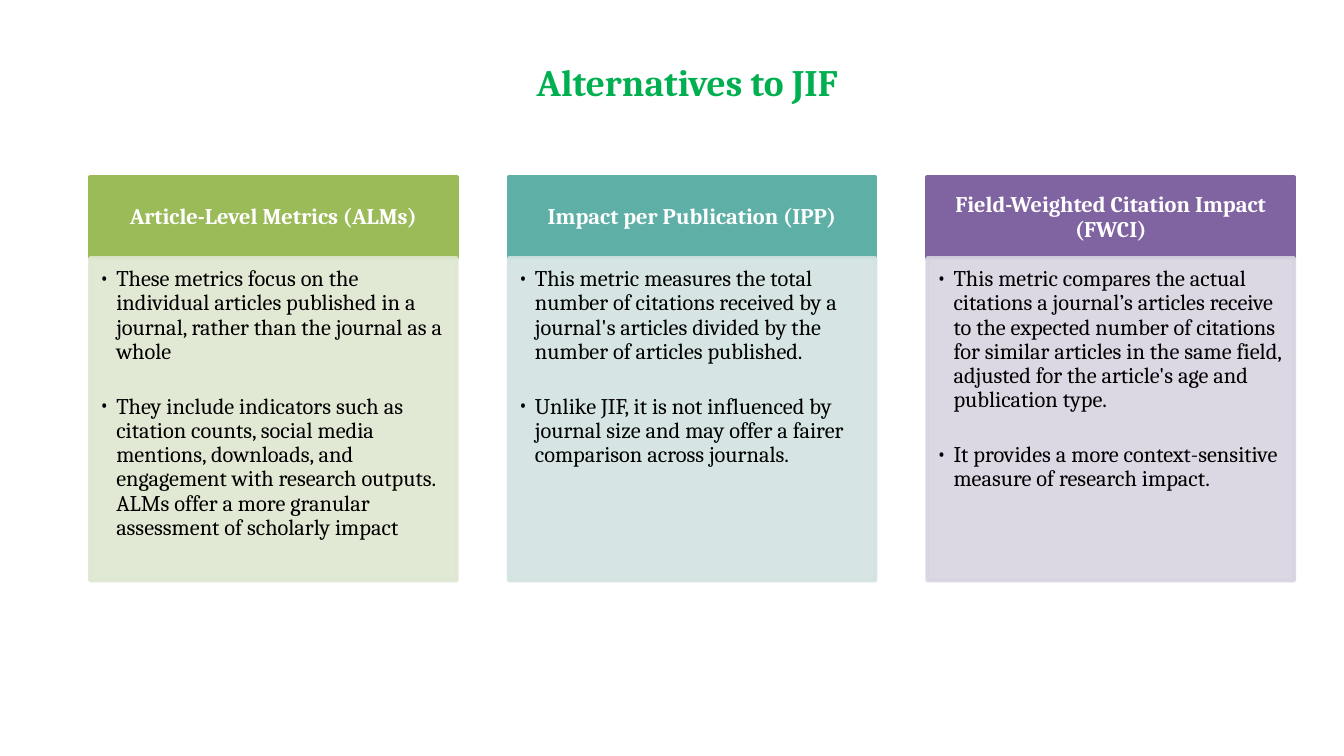
"""Build a slide comparing three alternatives to the journal impact factor."""
from lxml import etree
from pptx import Presentation
from pptx.dml.color import RGBColor
from pptx.enum.shapes import MSO_SHAPE
from pptx.enum.text import MSO_ANCHOR, PP_ALIGN
from pptx.oxml.ns import qn
from pptx.util import Inches, Pt

RECTANGLE = MSO_SHAPE.RECTANGLE
TOP, MIDDLE = MSO_ANCHOR.TOP, MSO_ANCHOR.MIDDLE
LEFT, CENTER = PP_ALIGN.LEFT, PP_ALIGN.CENTER
FONT = "Cambria"
COLUMN_LEFT, COLUMN_STEP, COLUMN_WIDTH = 0.67, 3.115, 2.73
HEADER_TOP, HEADER_HEIGHT = 1.32, 0.6
BODY_TOP, BODY_HEIGHT = 1.92, 2.4
COLUMNS = [
    ("Article-Level Metrics (ALMs)", "9BBB59", "DEE7D1", [
        "These metrics focus on the individual articles published in a journal, "
        "rather than the journal as a whole",
        "They include indicators such as citation counts, social media mentions, "
        "downloads, and engagement with research outputs. ALMs offer a more "
        "granular assessment of scholarly impact"]),
    ("Impact per Publication (IPP)", "5EAFA6", "D2E3E2", [
        "This metric measures the total number of citations received by a "
        "journal's articles divided by the number of articles published.",
        "Unlike JIF, it is not influenced by journal size and may offer a fairer "
        "comparison across journals."]),
    ("Field-Weighted Citation Impact (FWCI)", "8064A2", "D8D3E0", [
        "This metric compares the actual citations a journal’s articles receive "
        "to the expected number of citations for similar articles in the same "
        "field, adjusted for the article's age and publication type.",
        "It provides a more context-sensitive measure of research impact."]),
]


def format_font(paragraph, size, color, bold):
    for run in paragraph.runs:
        run.font.name = FONT
        run.font.size = Pt(size)
        run.font.bold = bold
        run.font.color.rgb = RGBColor.from_string(color)


def add_panel(left, top, height, color, anchor, insets):
    shape = slide.shapes.add_shape(
        RECTANGLE, Inches(left), Inches(top), Inches(COLUMN_WIDTH), Inches(height))
    shape.shadow.inherit = False
    shape.fill.solid()
    shape.fill.fore_color.rgb = RGBColor.from_string(color)
    shape.line.color.rgb = RGBColor.from_string(color)
    shape.line.width = Pt(2)
    text_frame = shape.text_frame
    text_frame.word_wrap = True
    text_frame.vertical_anchor = anchor
    (text_frame.margin_left, text_frame.margin_top,
     text_frame.margin_right, text_frame.margin_bottom) = map(Inches, insets)
    return shape


presentation = Presentation()
presentation.slide_width = Inches(10)
presentation.slide_height = Inches(5.625)
slide = presentation.slides.add_slide(presentation.slide_layouts[5])

title = slide.shapes.title
title.left, title.top = Inches(1.13), Inches(0.29)
title.width, title.height = Inches(7.97), Inches(0.64)
title.text_frame.text = "Alternatives to JIF"
title.text_frame.vertical_anchor = MIDDLE
title.text_frame.paragraphs[0].alignment = CENTER
format_font(title.text_frame.paragraphs[0], 20, "00B050", True)

for column, (heading, header_color, body_color, points) in enumerate(COLUMNS):
    left = COLUMN_LEFT + column * COLUMN_STEP

    header = add_panel(left, HEADER_TOP, HEADER_HEIGHT, header_color, MIDDLE,
                       (0.09, 0.05, 0.09, 0.05))
    header.text_frame.text = heading
    paragraph = header.text_frame.paragraphs[0]
    paragraph.alignment = CENTER
    paragraph.line_spacing = 0.9
    format_font(paragraph, 12, "FFFFFF", True)

    body = add_panel(left, BODY_TOP, BODY_HEIGHT, body_color, TOP,
                     (0.07, 0.07, 0.09, 0.1))
    for color in body.element.spPr.iter(qn("a:srgbClr")):
        etree.SubElement(color, qn("a:alpha"), val="90000")
    body.text_frame.text = "\n".join(points)
    for index, paragraph in enumerate(body.text_frame.paragraphs):
        paragraph.level = 1
        paragraph.alignment = LEFT
        paragraph.line_spacing = 0.9
        paragraph.space_before = Pt(16.5 * index)
        properties = paragraph._p.get_or_add_pPr()
        properties.set("marL", str(Inches(0.125)))
        properties.set("indent", str(Inches(-0.125)))
        etree.SubElement(properties, qn("a:buFont"), typeface=FONT)
        etree.SubElement(properties, qn("a:buChar"), char="•")
        format_font(paragraph, 12, "000000", False)

presentation.save("out.pptx")
